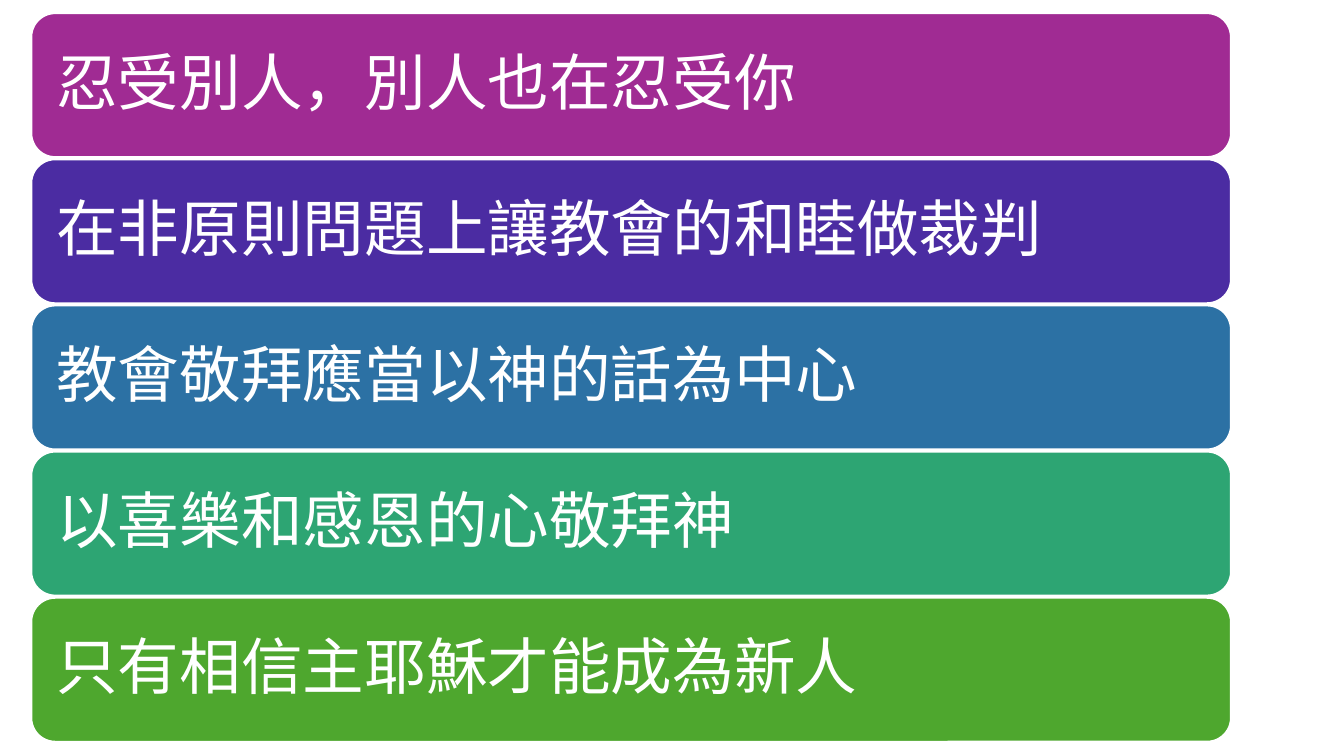
from lxml import etree
from pptx import Presentation
from pptx.dml.color import RGBColor
from pptx.enum.shapes import MSO_SHAPE
from pptx.enum.text import MSO_ANCHOR, PP_ALIGN
from pptx.oxml.ns import qn
from pptx.util import Inches, Pt

ROUND = MSO_SHAPE.ROUNDED_RECTANGLE
MIDDLE = MSO_ANCHOR.MIDDLE
LEFT = PP_ALIGN.LEFT

FONT = "Noto Sans CJK SC"
WHITE = "FFFFFF"
WIDE, HIGH = 13.33, 7.5
BAR_X, BAR_Y = 0.31, 0.13
BAR_W, BAR_H = 11.9, 1.43
STEP = 1.45
INSET = 0.18

POINTS = [
    ("忍受別人，別人也在忍受你", "A02B93"),
    ("在非原則問題上讓教會的和睦做裁判", "4B2CA2"),
    ("教會敬拜應當以神的話為中心", "2C71A4"),
    ("以喜樂和感恩的心敬拜神", "2DA573"),
    ("只有相信主耶穌才能成為新人", "4EA72E"),
]


def paint(color, code):
    color.rgb = RGBColor.from_string(code)


def add_text(shape, text):
    frame = shape.text_frame
    frame.word_wrap = True
    frame.vertical_anchor = MIDDLE
    frame.margin_left = frame.margin_right = Inches(INSET)
    frame.margin_top = frame.margin_bottom = Inches(INSET)
    para = frame.paragraphs[0]
    para.alignment = LEFT
    para.line_spacing = 0.9
    run = para.add_run()
    run.text = text
    run.font.size = Pt(44)
    paint(run.font.color, WHITE)
    run.font.name = FONT
    asian = etree.SubElement(run.font._element, qn("a:ea"))
    asian.set("typeface", FONT)


def add_bar(slide, row, text, code):
    top = BAR_Y + row * STEP
    bar = slide.shapes.add_shape(
        ROUND, Inches(BAR_X), Inches(top), Inches(BAR_W), Inches(BAR_H))
    bar.shadow.inherit = False
    bar.fill.solid()
    paint(bar.fill.fore_color, code)
    paint(bar.line.color, WHITE)
    bar.line.width = Pt(1.5)
    add_text(bar, text)


def main():
    deck = Presentation()
    deck.slide_width = Inches(WIDE)
    deck.slide_height = Inches(HIGH)
    slide = deck.slides.add_slide(deck.slide_layouts[6])
    for row, (text, code) in enumerate(POINTS):
        add_bar(slide, row, text, code)
    deck.save("out.pptx")


if __name__ == "__main__":
    main()
